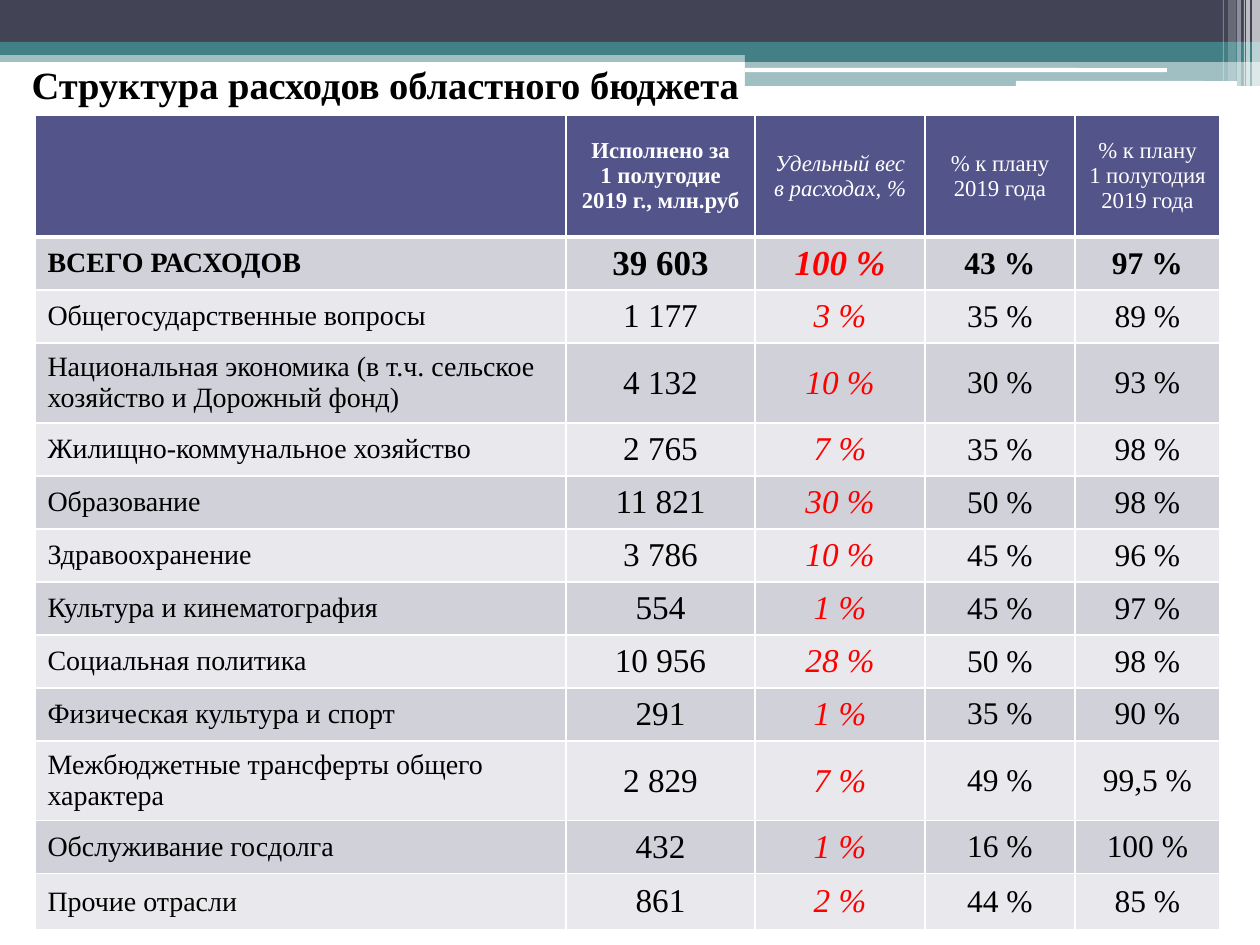
from pptx import Presentation
from pptx.dml.color import RGBColor
from pptx.enum.shapes import MSO_SHAPE as Kind
from pptx.enum.text import MSO_ANCHOR as Anchor, MSO_AUTO_SIZE as Auto, PP_ALIGN as Align
from pptx.oxml.ns import qn
from pptx.util import Emu, Pt
from lxml.etree import SubElement as Sub

TEAL, DARK, WHITE, BLACK, RED = "438086", "424456", "FFFFFF", "000000", "FF0000"
HEAD, BANDS = "53548A", ("D1D1DA", "E9E9ED")


def px(n):
    return Emu(round(n * 914400 / 126))


def rgb(code):
    return RGBColor.from_string(code)


class Deck:
    """Holds the style and the current slide."""

    def __init__(self, font):
        self.font = font
        self.prs = Presentation()
        self.prs.slide_width, self.prs.slide_height = px(1260), px(945)
        self.slide = self.prs.slides.add_slide(self.prs.slide_layouts[5])

    def style(self, frame, size, color, bold=False, ital=False, align=Align.LEFT):
        for para in frame.paragraphs:
            para.alignment = align
            for run in para.runs:
                font = run.font
                font.name, font.size = self.font, Pt(size)
                font.bold, font.italic = bold, ital
                font.color.rgb = rgb(color)

    def bar(self, x, y, w, h, color, alpha=100, kind=Kind.RECTANGLE):
        bar = self.slide.shapes.add_shape(kind, px(x), px(y), px(w), px(h))
        bar.shadow.inherit = False
        bar.fill.solid()
        bar.fill.fore_color.rgb = rgb(color)
        bar.line.fill.background()
        if alpha < 100:
            tone = bar.element.spPr.find(qn("a:solidFill"))[0]
            Sub(tone, qn("a:alpha"), val=str(alpha * 1000))

    def title(self, text, x, y, w, h, size):
        title = self.slide.shapes.title
        title.left, title.top, title.width, title.height = map(px, (x, y, w, h))
        frame = title.text_frame
        frame.text = text
        frame.word_wrap, frame.auto_size = True, Auto.NONE
        frame.vertical_anchor = Anchor.TOP
        self.style(frame, size, BLACK, bold=True)
        title.element.getparent().append(title.element)

    def edge(self, cell, **widths):
        props = cell._tc.get_or_add_tcPr()
        for side in "LRTB":
            line = Sub(props, qn("a:ln" + side), w=str(Pt(widths.get(side, 1))))
            Sub(Sub(line, qn("a:solidFill")), qn("a:srgbClr"), val=WHITE)

    def cell(self, cell, text, fill, edges, **look):
        self.edge(cell, **edges)
        cell.fill.solid()
        cell.fill.fore_color.rgb = rgb(fill)
        cell.vertical_anchor = Anchor.MIDDLE
        cell.text_frame.text = text
        self.style(cell.text_frame, **look)

    def table(self, x, y, cols, highs, rows):
        table = self.slide.shapes.add_table(
            len(rows), len(cols), px(x), px(y), px(sum(cols)), px(sum(highs))).table
        table.first_row = table.horz_banding = False
        for col, wide in zip(table.columns, cols):
            col.width = px(wide)
        for r, (row, high) in enumerate(zip(rows, highs)):
            table.rows[r].height = px(high)
            for c, text in enumerate(row):
                look = dict(ital=c == 2, align=Align.CENTER if c else Align.LEFT)
                if r == 0:
                    fill, edges = HEAD, {"B": 3}
                    look.update(size=13, color=WHITE, bold=c == 1)
                else:
                    fill, edges = BANDS[(r - 1) % 2], {"T": 3} if r == 1 else {}
                    size = (16, 19, 19, 18, 18)[c] + (r == 1 and c in (1, 2))
                    look.update(size=size, color=RED if c == 2 else BLACK, bold=r == 1)
                self.cell(table.cell(r, c), text, fill, edges, **look)


ROWS = [
    ("", "Исполнено за\v1 полугодие\v2019 г., млн.руб", "Удельный вес в расходах, %",
     "% к плану\v2019 года", "% к плану\v1 полугодия\n2019 года"),
    ("ВСЕГО РАСХОДОВ", "39 603", "100 %", "43 %", "97 %"),
    ("Общегосударственные вопросы", "1 177", "3 %", "35 %", "89 %"),
    ("Национальная экономика (в т.ч. сельское хозяйство и Дорожный фонд)",
     "4 132", "10 %", "30 %", "93 %"),
    ("Жилищно-коммунальное хозяйство", "2 765", "7 %", "35 %", "98 %"),
    ("Образование", "11 821", "30 %", "50 %", "98 %"),
    ("Здравоохранение", "3 786", "10 %", "45 %", "96 %"),
    ("Культура и кинематография", "554", "1 %", "45 %", "97 %"),
    ("Социальная политика", "10 956", "28 %", "50 %", "98 %"),
    ("Физическая культура и спорт", "291", "1 %", "35 %", "90 %"),
    ("Межбюджетные трансферты общего характера", "2 829", "7 %", "49 %", "99,5 %"),
    ("Обслуживание госдолга", "432", "1 %", "16 %", "100 %"),
    ("Прочие отрасли", "861", "2 %", "44 %", "85 %"),
]
BARS = [
    (0, 50, 1260, 12, TEAL, 50),
    (0, 0, 1260, 43, DARK),
    (0, 42, 1260, 13, TEAL),
    (745, 49, 515, 13, TEAL),
    (745, 61, 515, 25, TEAL, 50),
    (745, 68, 422, 4, WHITE, 100, Kind.ROUNDED_RECTANGLE),
    (1016, 81, 221, 5, WHITE, 100, Kind.ROUNDED_RECTANGLE),
]
STRIPES = [(1252, 8, 86, 65), (1246, 4, 86, 65), (1244, 1, 86, 60),
           (1237, 4, 86, 40), (1228, 8, 81, 20), (1223, 1, 81, 30)]


def main():
    deck = Deck("Times New Roman")
    for bar in BARS:
        deck.bar(*bar)
    for x, wide, high, alpha in STRIPES:
        deck.bar(x, 0, wide, high, WHITE, alpha)
    deck.title("Структура расходов областного бюджета", 19, 55, 1221, 59, 22)
    highs = [122] + [80 if len(row[0]) > 35 else 53 for row in ROWS[1:-1]] + [56]
    deck.table(35, 115, (531, 189, 170, 150, 145), highs, ROWS)
    deck.prs.save("out.pptx")


if __name__ == "__main__":
    main()
